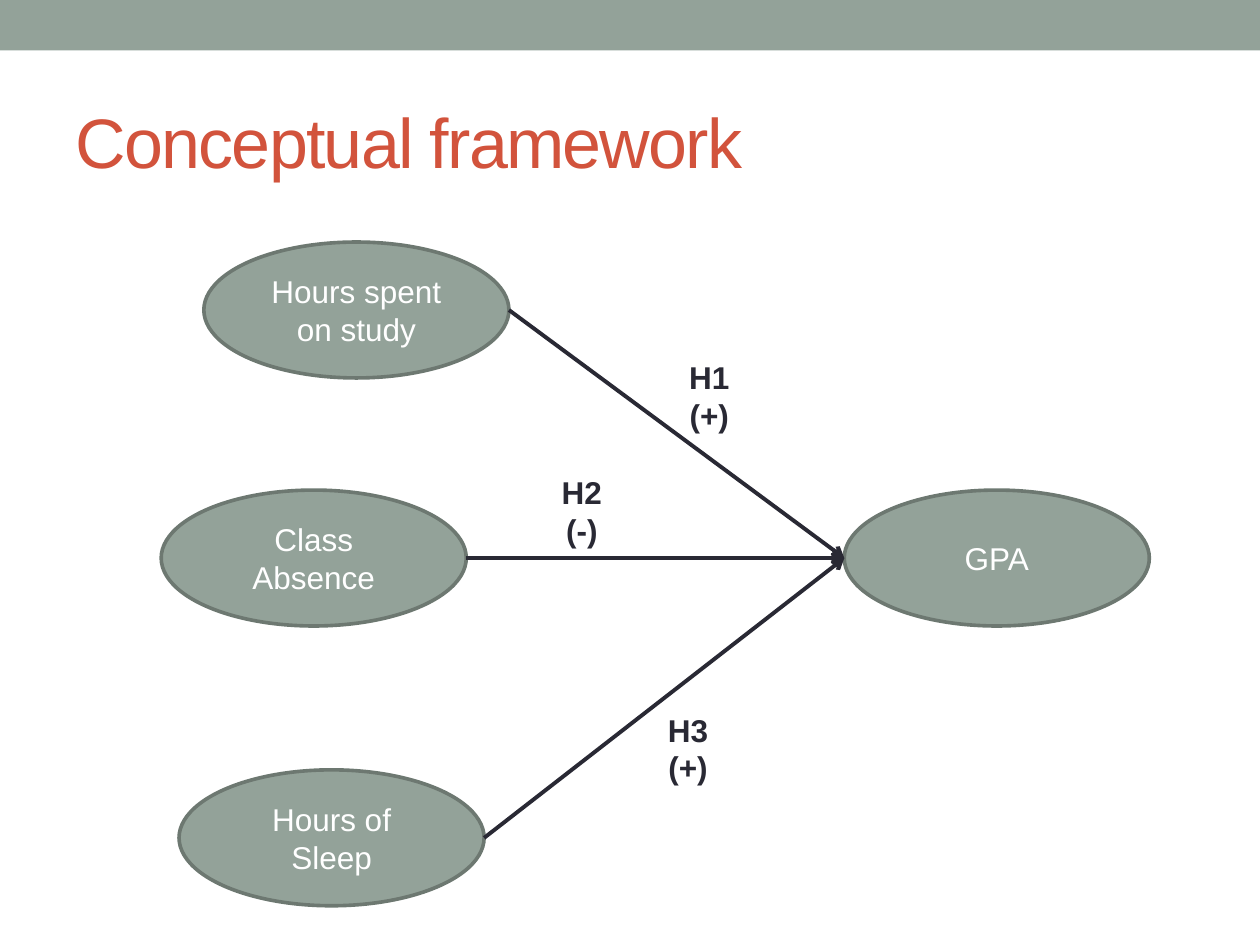
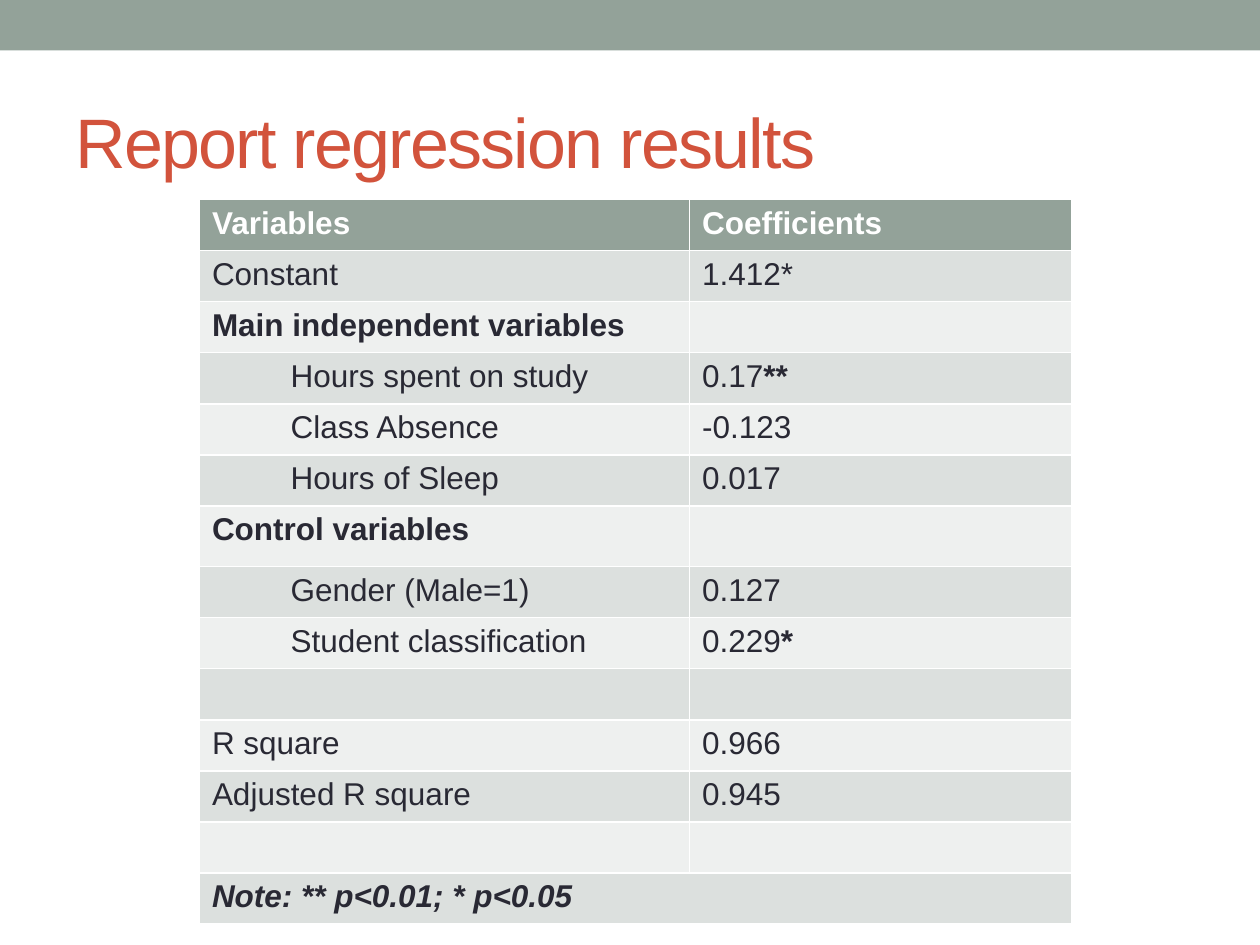
from dataclasses import dataclass

from lxml.etree import SubElement
from pptx import Presentation
from pptx.dml.color import RGBColor as RGB
from pptx.enum.shapes import MSO_CONNECTOR as CONNECTOR, MSO_SHAPE as SHAPE
from pptx.enum.text import MSO_ANCHOR as ANCHOR, MSO_AUTO_SIZE as AUTO_SIZE, PP_ALIGN as ALIGN
from pptx.oxml.ns import qn
from pptx.util import Cm, Pt


@dataclass(frozen=True)
class Theme:
    sage: RGB = RGB(0x93, 0xA2, 0x99)
    sage_dark: RGB = RGB(0x6D, 0x78, 0x71)
    row_dark: RGB = RGB(0xDC, 0xE0, 0xDE)
    row_light: RGB = RGB(0xEE, 0xF0, 0xEF)
    red: RGB = RGB(0xD2, 0x53, 0x3C)
    ink: RGB = RGB(0x29, 0x29, 0x34)
    white: RGB = RGB(0xFF, 0xFF, 0xFF)
    font: str = "Arial"
    title_size: Pt = Pt(40)
    body_size: Pt = Pt(18)
    outline: Pt = Pt(2.08)
    arrow: Pt = Pt(2.25)


T = Theme()
OVAL_W, OVAL_H = 6.15, 2.74
OVAL_LEFT, OVAL_RIGHT = 2, 6  # connection sites of an ellipse
ROW_H, TALL_ROW_H = 1.03, 1.22
CELL_INDENT = 1.84

FACTORS = [  # text, left, top
    ("Hours spent on study", 4.11, 4.88),
    ("Class\nAbsence", 3.25, 9.88),
    ("Hours of Sleep", 3.61, 15.52),
]
HYPOTHESES = [  # text, left, top
    ("H1\n(+)", 13.64, 7.09),
    ("H2\n(-)", 11.07, 9.42),
    ("H3\n(+)", 13.21, 14.2),
]
HEADER, PLAIN, GROUP, MEMBER, NOTE = range(5)
RESULTS = [  # row kind, variable, coefficient, bold significance stars
    (HEADER, "Variables", "Coefficients", ""),
    (PLAIN, "Constant", "1.412*", ""),
    (GROUP, "Main independent variables", "", ""),
    (MEMBER, "Hours spent on study", "0.17", "**"),
    (MEMBER, "Class Absence", "-0.123", ""),
    (MEMBER, "Hours of Sleep", "0.017", ""),
    (GROUP, "Control variables", "", ""),
    (MEMBER, "Gender (Male=1)", "0.127", ""),
    (MEMBER, "Student classification", "0.229", "*"),
    (PLAIN, "", "", ""),
    (PLAIN, "R square", "0.966", ""),
    (PLAIN, "Adjusted R square", "0.945", ""),
    (PLAIN, "", "", ""),
    (NOTE, "Note: ** p<0.01; * p<0.05", "", ""),
]


def style_font(font, color, size=T.body_size, bold=False, italic=False):
    font.name, font.size, font.bold, font.italic = T.font, size, bold, italic
    font.color.rgb = color


def fill_centred(tf, text, color, bold=False):
    """Write one centred paragraph for each line of text."""
    tf.text = text
    for p in tf.paragraphs:
        p.alignment = ALIGN.CENTER
        style_font(p.font, color, bold=bold)


def add_band(prs, layout, slide):
    """Draw the top band and move it behind everything on the layout."""
    sp = slide.shapes.add_shape(SHAPE.RECTANGLE, 0, 0, prs.slide_width, Cm(1.02))
    sp.shadow.inherit = False
    sp.fill.solid()
    sp.fill.fore_color.rgb = T.sage
    sp.line.fill.background()
    layout.shapes.element.insert(2, sp.element)


def add_titled_slide(prs, layout, text):
    s = prs.slides.add_slide(layout)
    title = s.shapes.title
    title.left, title.top, title.width, title.height = Cm(1.27), Cm(1.47), Cm(22.86), Cm(2.74)
    tf = title.text_frame
    tf.text, tf.vertical_anchor = text, ANCHOR.MIDDLE
    p = tf.paragraphs[0]
    p.alignment = ALIGN.LEFT
    style_font(p.font, T.red, T.title_size)
    p.runs[0]._r.get_or_add_rPr().set("spc", "-100")
    return s


def add_oval(s, text, left, top):
    sp = s.shapes.add_shape(SHAPE.OVAL, Cm(left), Cm(top), Cm(OVAL_W), Cm(OVAL_H))
    sp.shadow.inherit = False
    sp.fill.solid()
    sp.fill.fore_color.rgb = T.sage
    sp.line.color.rgb, sp.line.width = T.sage_dark, T.outline
    fill_centred(sp.text_frame, text, T.white)
    return sp


def add_arrow(s, start, end):
    """Join the right of one oval to the left of another."""
    c = s.shapes.add_connector(
        CONNECTOR.STRAIGHT,
        start.left + start.width, start.top + start.height // 2,
        end.left, end.top + end.height // 2)
    c.line.color.rgb, c.line.width = T.ink, T.arrow
    SubElement(c.line._get_or_add_ln(), qn("a:tailEnd"), type="arrow")
    SubElement(c.element.spPr, qn("a:effectLst"))
    joins = c.element.nvCxnSpPr.cNvCxnSpPr
    for tag, sp, site in (("a:stCxn", start, OVAL_RIGHT), ("a:endCxn", end, OVAL_LEFT)):
        SubElement(joins, qn(tag), id=str(sp.shape_id), idx=str(site))


def add_label(s, text, left, top):
    tf = s.shapes.add_textbox(Cm(left), Cm(top), Cm(1.32), Cm(1.8)).text_frame
    tf.word_wrap, tf.auto_size = False, AUTO_SIZE.SHAPE_TO_FIT_TEXT
    fill_centred(tf, text, T.ink, bold=True)


def add_run(cell, text, color, bold=False, italic=False):
    if text:
        r = cell.text_frame.paragraphs[0].add_run()
        r.text = text
        style_font(r.font, color, bold=bold, italic=italic)


def add_results_table(s, left, top, col_widths):
    height = ROW_H * (len(RESULTS) - 1) + TALL_ROW_H
    table = s.shapes.add_table(len(RESULTS), len(col_widths), Cm(left), Cm(top),
                               Cm(sum(col_widths)), Cm(height)).table
    for col, width in zip(table.columns, col_widths):
        col.width = Cm(width)
    for i, (kind, variable, coefficient, stars) in enumerate(RESULTS):
        table.rows[i].height = Cm(TALL_ROW_H if variable == "Control variables" else ROW_H)
        name, value = table.cell(i, 0), table.cell(i, 1)
        color = T.white if kind == HEADER else T.ink
        for cell in (name, value):
            cell.fill.solid()
            cell.fill.fore_color.rgb = (
                T.sage if kind == HEADER else T.row_dark if i % 2 else T.row_light)
        if kind == MEMBER:
            name.margin_left = Cm(CELL_INDENT)
        if kind == NOTE:
            name.merge(value)
        add_run(name, variable, color, kind in (HEADER, GROUP, NOTE), kind == NOTE)
        add_run(value, coefficient, color, kind == HEADER)
        add_run(value, stars, color, bold=True)


def main():
    prs = Presentation()
    prs.slide_width, prs.slide_height = Cm(25.4), Cm(19.05)
    layout = prs.slide_layouts[5]

    framework = add_titled_slide(prs, layout, "Conceptual framework")
    add_band(prs, layout, framework)
    gpa = add_oval(framework, "GPA", 17.02, 9.88)
    factors = [add_oval(framework, *factor) for factor in FACTORS]
    for factor in factors:
        add_arrow(framework, factor, gpa)
    for hypothesis in HYPOTHESES:
        add_label(framework, *hypothesis)

    results = add_titled_slide(prs, layout, "Report regression results")
    add_results_table(results, 4.02, 4.02, (9.88, 7.7))

    prs.save("out.pptx")


if __name__ == "__main__":
    main()
